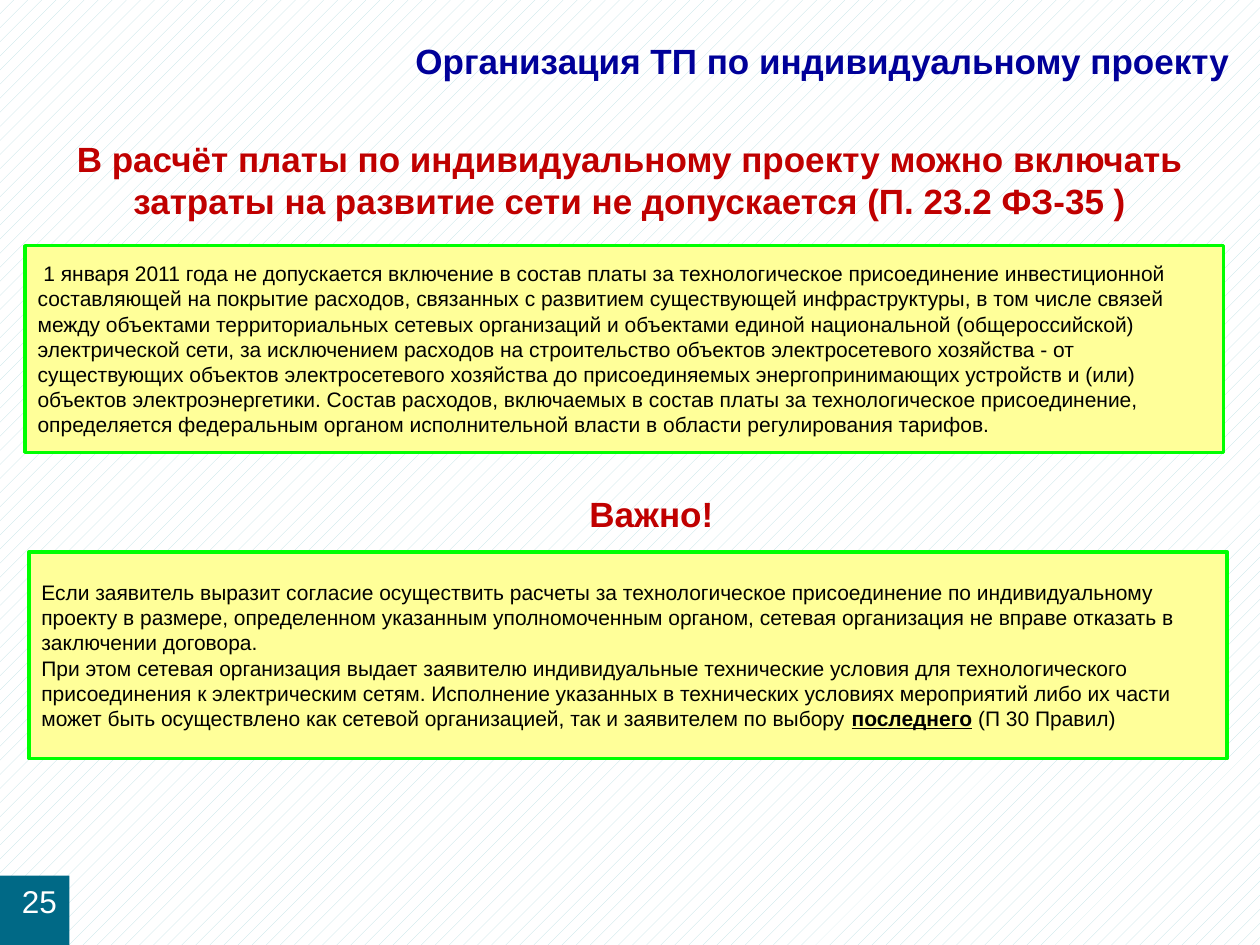
from pptx import Presentation
from pptx.dml.color import RGBColor
from pptx.enum.dml import MSO_PATTERN
from pptx.enum.shapes import MSO_SHAPE
from pptx.enum.text import MSO_ANCHOR, PP_ALIGN
from pptx.util import Inches, Pt

RECTANGLE = MSO_SHAPE.RECTANGLE
DOTTED = MSO_PATTERN.PERCENT_10
TOP, MIDDLE, BOTTOM = MSO_ANCHOR.TOP, MSO_ANCHOR.MIDDLE, MSO_ANCHOR.BOTTOM
LEFT, CENTER, RIGHT = PP_ALIGN.LEFT, PP_ALIGN.CENTER, PP_ALIGN.RIGHT

COLORS = {
    "title": "000099",
    "heading": "C00000",
    "text": "000000",
    "box": "FFFF99",
    "border": "00FF00",
    "number": "006986",
    "white": "FFFFFF",
    "pattern": "BBE0E3",
}

TITLE_FONT = {"size": Pt(20), "bold": True}
BODY_FONT = {"size": Pt(12), "bold": False}
NUMBER_FONT = {"size": Pt(18), "bold": False}
EMPHASIS_FONT = {"size": Pt(12), "bold": True, "underline": True}

INVESTMENT_LINES = [
    [" 1 января 2011 года не допускается включение в состав платы за технологическое присоединение инвестиционной"],
    ["составляющей на покрытие расходов, связанных с развитием существующей инфраструктуры, в том числе связей"],
    ["между объектами территориальных сетевых организаций и объектами единой национальной (общероссийской)"],
    ["электрической сети, за исключением расходов на строительство объектов электросетевого хозяйства - от"],
    ["существующих объектов электросетевого хозяйства до присоединяемых энергопринимающих устройств и (или)"],
    ["объектов электроэнергетики. Состав расходов, включаемых в состав платы за технологическое присоединение,"],
    ["определяется федеральным органом исполнительной власти в области регулирования тарифов."],
]
CONSENT_LINES = [
    ["Если заявитель выразит согласие осуществить расчеты за технологическое присоединение по индивидуальному"],
    ["проекту в размере, определенном указанным уполномоченным органом, сетевая организация не вправе отказать в"],
    ["заключении договора."],
    ["При этом сетевая организация выдает заявителю индивидуальные технические условия для технологического"],
    ["присоединения к электрическим сетям. Исполнение указанных в технических условиях мероприятий либо их части"],
    ["может быть осуществлено как сетевой организацией, так и заявителем по выбору ",
     ("последнего", EMPHASIS_FONT), " (П 30 Правил)"],
]


def color(name):
    """Return the named colour."""
    return RGBColor.from_string(COLORS[name])


def set_attributes(target, values):
    """Set every attribute in a dict of format values."""
    for name, value in values.items():
        setattr(target, name, value)


def write_lines(shape, lines, font, color_name, alignment, frame_format):
    """Write one paragraph per line, each a list of runs."""
    frame = shape.text_frame
    set_attributes(frame, frame_format)
    for index, line in enumerate(lines):
        paragraph = frame.paragraphs[0] if index == 0 else frame.add_paragraph()
        set_attributes(paragraph, {"alignment": alignment, "space_before": Pt(0)})
        for part in line:
            text, run_font = part if isinstance(part, tuple) else (part, font)
            run = paragraph.add_run()
            run.text = text
            set_attributes(run.font, {"name": "Arial", **run_font})
            run.font.color.rgb = color(color_name)


def set_background(slide):
    """Give the slide its patterned background."""
    fill = slide.background.fill
    fill.patterned()
    fill.pattern = DOTTED
    fill.fore_color.rgb = color("pattern")
    fill.back_color.rgb = color("white")


def add_title(slide, text):
    """Place and format the slide title."""
    title = slide.shapes.title
    set_attributes(title, {"left": Inches(1.5), "top": Inches(0.31),
                           "width": Inches(8.26), "height": Inches(0.34)})
    margins = {f"margin_{side}": 0 for side in ("left", "top", "right", "bottom")}
    write_lines(title, [[text]], TITLE_FONT, "title", RIGHT,
                {"vertical_anchor": MIDDLE, "word_wrap": True, **margins})


def add_heading(slide, left, top, text):
    """Add a centred red heading that rests on its lower edge."""
    heading = slide.shapes.add_textbox(Inches(left), Inches(top), Inches(10), Inches(0.48))
    write_lines(heading, [[text]], TITLE_FONT, "heading", CENTER,
                {"vertical_anchor": BOTTOM, "word_wrap": True})


def add_rectangle(slide, left, top, width, height, fill_name):
    """Add a filled rectangle without shadow or outline."""
    shape = slide.shapes.add_shape(
        RECTANGLE, Inches(left), Inches(top), Inches(width), Inches(height))
    shape.shadow.inherit = False
    shape.fill.solid()
    shape.fill.fore_color.rgb = color(fill_name)
    shape.line.fill.background()
    return shape


def add_rule_box(slide, left, top, lines):
    """Add a yellow box with a green border and left-aligned text."""
    box = add_rectangle(slide, left, top, 9.51, 1.64, "box")
    box.line.color.rgb = color("border")
    box.line.width = Pt(2)
    write_lines(box, lines, BODY_FONT, "text", LEFT,
                {"vertical_anchor": MIDDLE, "word_wrap": False})


def add_page_number(slide, number):
    """Add the page number square in the lower left corner."""
    square = add_rectangle(slide, 0, 6.95, 0.55, 0.55, "number")
    write_lines(square, [[number]], NUMBER_FONT, "white", RIGHT,
                {"vertical_anchor": TOP, "word_wrap": True})


def main():
    """Build the slide and save it."""
    presentation = Presentation()
    set_attributes(presentation, {"slide_width": Inches(10), "slide_height": Inches(7.5)})
    slide = presentation.slides.add_slide(presentation.slide_layouts.get_by_name("Title Only"))
    set_background(slide)
    add_title(slide, "Организация ТП по индивидуальному проекту")
    add_heading(slide, 0, 1.33, "В расчёт платы по индивидуальному проекту можно включать "
                                "затраты на развитие сети не допускается (П. 23.2 ФЗ-35 )")
    add_rule_box(slide, 0.2, 1.95, INVESTMENT_LINES)
    add_heading(slide, 0.17, 3.81, "Важно!")
    add_rule_box(slide, 0.23, 4.38, CONSENT_LINES)
    add_page_number(slide, "25")
    presentation.save("out.pptx")


if __name__ == "__main__":
    main()
